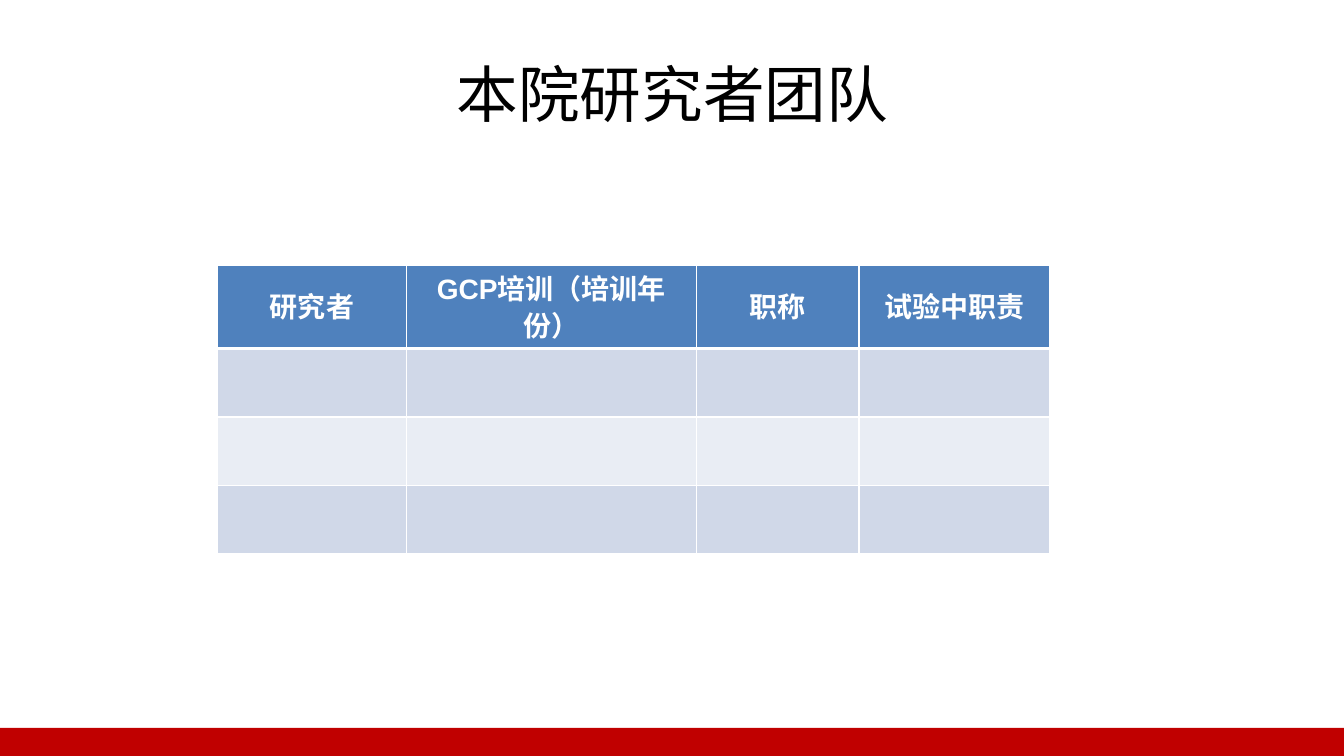
from dataclasses import dataclass

from lxml import etree
from pptx import Presentation
from pptx import util as u
from pptx.dml.color import RGBColor
from pptx.enum import shapes, text
from pptx.oxml import ns

CJK_FONT = "Noto Sans CJK SC"
WHITE = "FFFFFF"
BAND_FILLS = ["D0D8E8", "E9EDF4", "D0D8E8"]
ROW_HEIGHT = 0.68


@dataclass
class Column:
    heading: str
    width: float


COLUMNS = [
    Column("研究者", 1.87),
    Column("GCP培训（培训年份）", 2.88),
    Column("职称", 1.61),
    Column("试验中职责", 1.89),
]


def color(value: str) -> RGBColor:
    return RGBColor.from_string(value)


def format_paragraph(paragraph, size: float, fill: str, latin: str, bold: bool) -> None:
    paragraph.alignment = text.PP_ALIGN.CENTER
    font = paragraph.font
    font.size = u.Pt(size)
    font.bold = bold
    font.color.rgb = color(fill)
    font.name = latin
    properties = paragraph._p.pPr.find(ns.qn("a:defRPr"))
    etree.SubElement(properties, ns.qn("a:ea"), typeface=CJK_FONT)


def format_cell(cell, fill: str, top: float, bottom: float) -> None:
    """Set the white borders (widths in points), then the fill."""
    properties = cell._tc.get_or_add_tcPr()
    for side, width in (("L", 1), ("R", 1), ("T", top), ("B", bottom)):
        line = etree.SubElement(properties, ns.qn(f"a:ln{side}"), w=str(u.Pt(width)))
        solid = etree.SubElement(line, ns.qn("a:solidFill"))
        etree.SubElement(solid, ns.qn("a:srgbClr"), val=WHITE)
    cell.fill.solid()
    cell.fill.fore_color.rgb = color(fill)


def add_footer_bar(slide) -> None:
    bar = slide.shapes.add_shape(
        shapes.MSO_SHAPE.RECTANGLE,
        u.Inches(-0.03), u.Inches(7.22), u.Inches(13.37), u.Inches(0.31),
    )
    bar.shadow.inherit = False
    bar.fill.solid()
    bar.fill.fore_color.rgb = color("C00000")
    bar.line.fill.background()


def format_title(slide) -> None:
    title = slide.shapes.title
    title.left, title.top = u.Inches(0.67), u.Inches(0.3)
    title.width, title.height = u.Inches(12), u.Inches(1.25)
    title.text_frame.text = "本院研究者团队"
    title.text_frame.vertical_anchor = text.MSO_ANCHOR.MIDDLE
    format_paragraph(title.text_frame.paragraphs[0], 44, "000000", CJK_FONT, False)


def add_team_table(slide) -> None:
    row_count = 1 + len(BAND_FILLS)
    table = slide.shapes.add_table(
        row_count, len(COLUMNS), u.Inches(2.16), u.Inches(2.63),
        u.Inches(sum(column.width for column in COLUMNS)),
        u.Inches(ROW_HEIGHT * row_count),
    ).table
    for row in table.rows:
        row.height = u.Inches(ROW_HEIGHT)

    for index, column in enumerate(COLUMNS):
        table.columns[index].width = u.Inches(column.width)

        # Heading cell
        heading = table.cell(0, index)
        format_cell(heading, "4F81BD", top=1, bottom=3)
        heading.vertical_anchor = text.MSO_ANCHOR.MIDDLE
        heading.text = column.heading
        paragraph = heading.text_frame.paragraphs[0]
        paragraph.line_spacing = 0.9
        paragraph.space_after = u.Pt(2)
        format_paragraph(paragraph, 20, WHITE, "Arial", True)

        # Empty banded cells
        for row, fill in enumerate(BAND_FILLS, start=1):
            format_cell(table.cell(row, index), fill, top=3 if row == 1 else 1, bottom=1)


def main() -> None:
    presentation = Presentation()
    presentation.slide_width = u.Inches(13.33)
    presentation.slide_height = u.Inches(7.5)
    slide = presentation.slides.add_slide(presentation.slide_layouts[5])
    add_footer_bar(slide)
    format_title(slide)
    add_team_table(slide)
    presentation.save("out.pptx")


if __name__ == "__main__":
    main()
